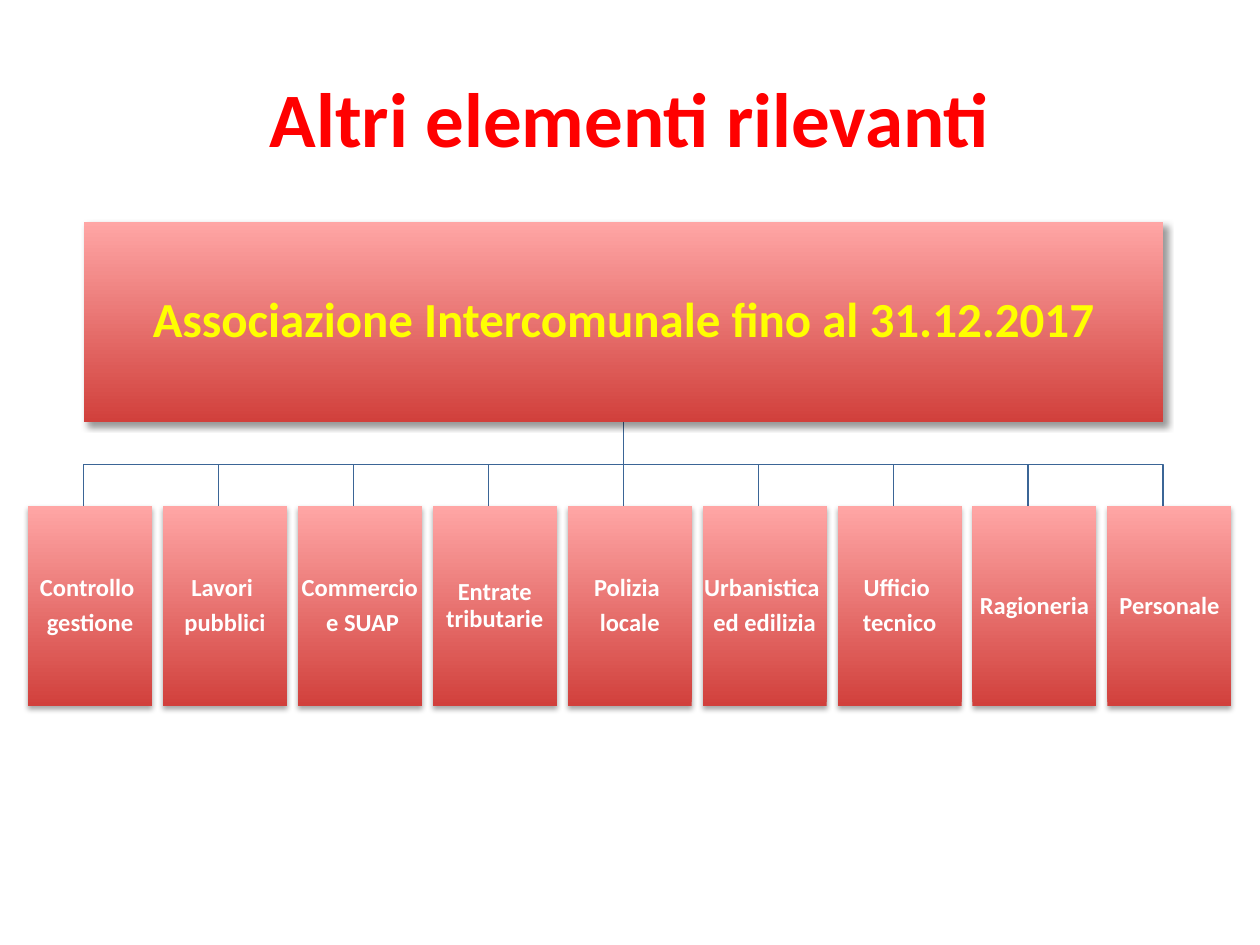
from dataclasses import dataclass

import pptx
import pptx.dml.color
import pptx.enum.shapes
import pptx.enum.text
import pptx.oxml
import pptx.oxml.ns
import pptx.util

Pt = pptx.util.Pt
FONT = "Calibri"
COLORS = {
    "title": "FF0000",
    "head": "FFFF00",
    "text": "FFFFFF",
    "dark": "D1403C",
    "light": "FFA6A5",
    "line": "3B6596",
    "shade": "000000",
}


@dataclass(frozen=True)
class Shade:
    alpha: int
    blur: float
    dist: float
    angle: int


@dataclass(frozen=True)
class Box:
    left: float
    top: float
    width: float
    height: float
    lines: tuple[str, ...]
    size: int
    color: str
    shade: Shade

    @property
    def mid(self) -> float:
        return self.left + self.width / 2

    @property
    def base(self) -> float:
        return self.top + self.height


HEAD_SHADE = Shade(40, 4, 3, 45)
UNIT_SHADE = Shade(35, 3.1, 1.8, 90)
HEAD = Box(47.8, 126.9, 616.8, 114.3,
           ("Associazione Intercomunale fino al 31.12.2017",), 28, "head", HEAD_SHADE)
UNITS = (
    ("Controllo ", "gestione"),
    ("Lavori ", "pubblici"),
    ("Commercio", " e SUAP"),
    ("Entrate tributarie",),
    ("Polizia ", "locale"),
    ("Urbanistica ", "ed edilizia"),
    ("Ufficio ", "tecnico"),
    ("Ragioneria",),
    ("Personale",),
)
STEP = HEAD.width / (len(UNITS) - 1)
UNIT_LEFT, UNIT_TOP, UNIT_WIDTH = 16, 289.3, 70.9


def rgb(name: str) -> pptx.dml.color.RGBColor:
    return pptx.dml.color.RGBColor.from_string(COLORS[name])


def set_font(para, size: int, color: str) -> None:
    para.alignment = pptx.enum.text.PP_ALIGN.CENTER
    para.font.name = FONT
    para.font.size = Pt(size)
    para.font.bold = True
    para.font.color.rgb = rgb(color)


def add_shade(shape, shade: Shade) -> None:
    shape.shadow.inherit = False
    effects = shape.element.spPr.find(pptx.oxml.ns.qn("a:effectLst"))
    effects.append(pptx.oxml.parse_xml(
        f'<a:outerShdw {pptx.oxml.ns.nsdecls("a")} blurRad="{Pt(shade.blur)}" '
        f'dist="{Pt(shade.dist)}" dir="{shade.angle * 60000}" rotWithShape="0">'
        f'<a:srgbClr val="{COLORS["shade"]}"><a:alpha val="{shade.alpha * 1000}"/>'
        f'</a:srgbClr></a:outerShdw>'))


def draw_box(slide, box: Box) -> None:
    shape = slide.shapes.add_shape(
        pptx.enum.shapes.MSO_SHAPE.RECTANGLE,
        Pt(box.left), Pt(box.top), Pt(box.width), Pt(box.height))
    shape.line.fill.background()
    shape.fill.gradient()
    shape.fill.gradient_angle = 90
    for stop, name, place in zip(shape.fill.gradient_stops, ("dark", "light"), (0, 1)):
        stop.color.rgb = rgb(name)
        stop.position = place
    add_shade(shape, box.shade)
    frame = shape.text_frame
    frame.word_wrap = True
    frame.vertical_anchor = pptx.enum.text.MSO_ANCHOR.MIDDLE
    frame.margin_left = frame.margin_right = frame.margin_top = frame.margin_bottom = 0
    frame.text = "\n".join(box.lines)
    for para in frame.paragraphs:
        set_font(para, box.size, box.color)
        para.line_spacing = 0.9
        para.space_after = Pt(0.35 * box.size)


def draw_link(slide, end: float) -> None:
    start, top = HEAD.mid, HEAD.base
    if abs(end - start) < 0.1:
        link = slide.shapes.add_connector(
            pptx.enum.shapes.MSO_CONNECTOR.STRAIGHT,
            Pt(start), Pt(top), Pt(start), Pt(UNIT_TOP))
        link.element.spPr.append(pptx.oxml.parse_xml(
            f'<a:effectLst {pptx.oxml.ns.nsdecls("a")}/>'))
    else:
        bend = (top + UNIT_TOP) / 2
        path = slide.shapes.build_freeform(Pt(start), Pt(top))
        path.add_line_segments(
            [(Pt(start), Pt(bend)), (Pt(end), Pt(bend)), (Pt(end), Pt(UNIT_TOP))],
            close=False)
        link = path.convert_to_shape()
        link.fill.background()
        link.shadow.inherit = False
    link.line.color.rgb = rgb("line")
    link.line.width = Pt(0.75)


def main() -> None:
    deck = pptx.Presentation()
    deck.slide_width, deck.slide_height = Pt(720), Pt(540)
    slide = deck.slides.add_slide(deck.slide_layouts[5])

    title = slide.shapes.title
    title.left, title.top, title.width, title.height = Pt(36), Pt(21.6), Pt(648), Pt(90)
    title.text_frame.text = "Altri elementi rilevanti"
    title.text_frame.vertical_anchor = pptx.enum.text.MSO_ANCHOR.MIDDLE
    set_font(title.text_frame.paragraphs[0], 44, "title")

    for i in reversed(range(len(UNITS))):
        draw_link(slide, HEAD.left + i * STEP)
    draw_box(slide, HEAD)
    for i, lines in enumerate(UNITS):
        draw_box(slide, Box(UNIT_LEFT + i * STEP, UNIT_TOP, UNIT_WIDTH, HEAD.height,
                            lines, 14, "text", UNIT_SHADE))
    deck.save("out.pptx")


if __name__ == "__main__":
    main()
